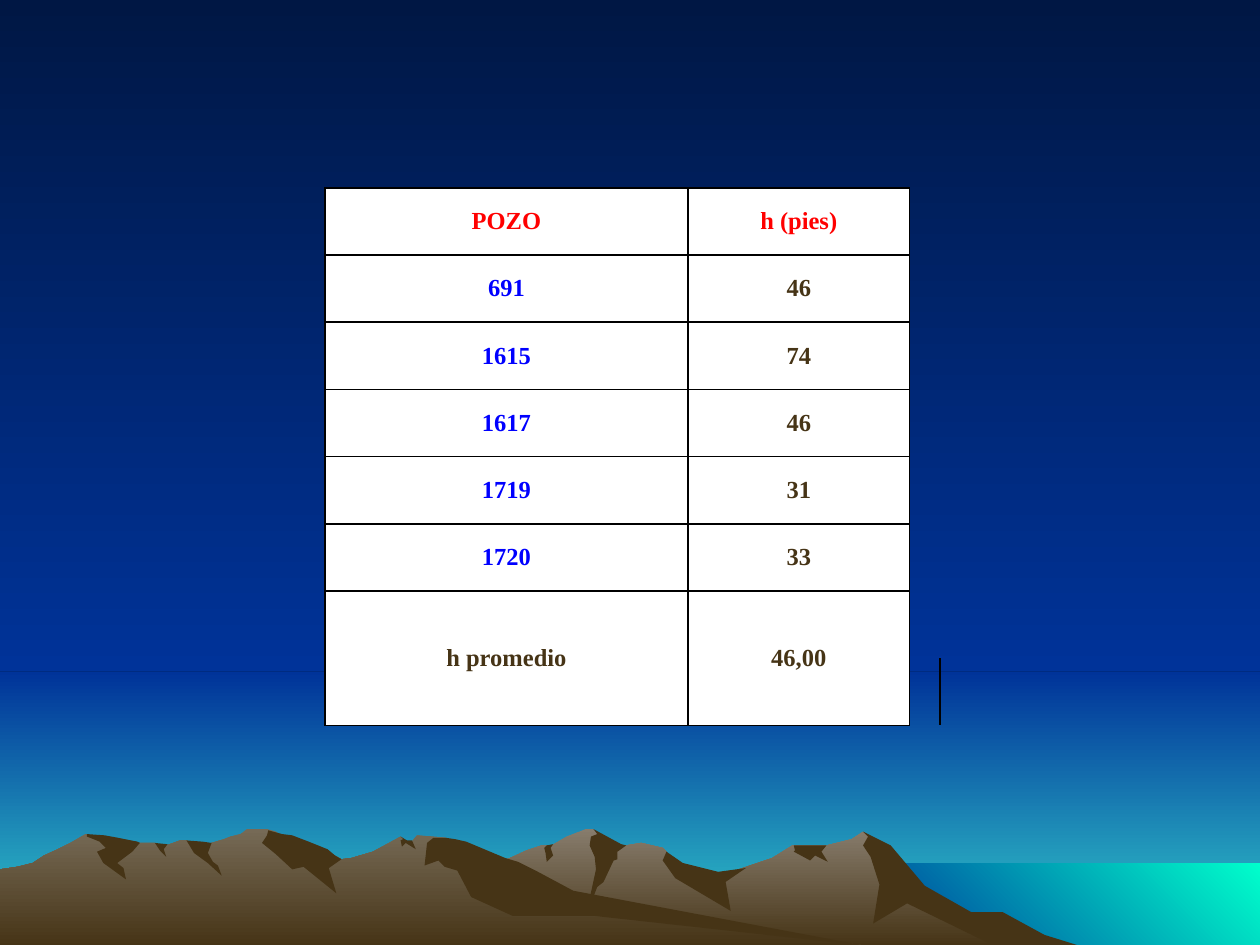
from lxml.etree import SubElement
from pptx import Presentation
from pptx.dml.color import RGBColor
from pptx.enum.shapes import MSO_SHAPE
from pptx.enum.text import MSO_ANCHOR, PP_ALIGN
from pptx.oxml.ns import qn
from pptx.util import Inches, Pt

NIGHT = RGBColor(0x00, 0x17, 0x44)
BLUE = RGBColor(0x00, 0x33, 0x99)
HORIZON = RGBColor(0x33, 0xCC, 0xCC)
SEA = RGBColor(0x00, 0xFF, 0xCC)
FAR_RIDGE = RGBColor(0x87, 0x7C, 0x6C)
NEAR_RIDGE = RGBColor(0x76, 0x6A, 0x56)
BROWN = RGBColor(0x46, 0x34, 0x16)
RED = RGBColor(0xFF, 0x00, 0x00)
WELL_BLUE = RGBColor(0x00, 0x00, 0xFF)
WHITE = RGBColor(0xFF, 0xFF, 0xFF)

DOWN, UP_RIGHT = 270, 45  # gradient directions, counter-clockwise degrees

# Mountain outlines, in inches on the slide
FAR_RANGE = [
    (8.02, 7.4), (7.78, 7.27), (7.64, 7.23), (7.23, 6.98), (7.02, 6.71), (6.85, 6.6),
    (6.76, 6.66), (6.56, 6.71), (6.29, 6.71), (6.13, 6.81), (5.66, 6.97), (5.36, 6.9),
    (5.29, 6.76), (5.26, 6.73), (5.09, 6.69), (4.97, 6.71), (4.86, 6.73), (4.74, 6.61),
    (4.71, 6.58), (4.65, 6.58), (4.5, 6.64), (4.38, 6.71), (4.3, 6.71), (4.18, 6.75),
    (4.05, 6.81), (3.94, 6.85), (3.55, 6.98), (3.27, 7.09), (2.77, 7.39), (2.58, 7.51),
    (8.21, 7.51)]
NEAR_RANGE = [
    (6.9, 7.51), (6.67, 7.48), (4.32, 7.12), (3.54, 6.65), (3.31, 6.63), (3.27, 6.68),
    (3.23, 6.68), (3.18, 6.64), (2.96, 6.76), (2.79, 6.81), (2.71, 6.82), (2.6, 6.76),
    (2.36, 6.81), (2.23, 6.63), (2.19, 6.6), (2.12, 6.58), (1.96, 6.58), (1.91, 6.62),
    (1.83, 6.64), (1.78, 6.66), (1.68, 6.69), (1.6, 6.71), (1.48, 6.67), (1.43, 6.67),
    (1.32, 6.71), (1.28, 6.71), (1.23, 6.69), (1.11, 6.69), (0.94, 6.71), (0.68, 6.62),
    (0.56, 6.69), (0.46, 6.74), (0.35, 6.79), (0.26, 6.85), (0.14, 6.88), (0, 6.9),
    (0, 7.51)]
FAR_SHADOWS = [
    [(7.96, 7.24), (7.71, 7.24), (7.34, 7.03), (7.07, 6.71), (6.85, 6.6), (6.89, 6.64),
     (6.85, 6.71), (6.91, 6.8), (6.98, 7.02), (6.93, 7.33), (7.2, 7.17), (7.92, 7.52),
     (8.58, 7.51), (8.29, 7.42)],
    [(4.71, 6.58), (4.74, 6.62), (4.69, 6.64), (4.68, 6.71), (4.72, 6.8), (4.73, 6.9),
     (4.65, 7.27), (4.74, 7.04), (4.79, 7), (4.87, 6.83), (4.9, 6.82), (4.9, 6.76),
     (4.97, 6.71), (4.93, 6.7)],
    [(5.29, 6.76), (5.26, 6.83), (5.36, 6.97), (5.8, 7.23), (5.76, 7), (5.92, 6.89),
     (5.7, 6.92), (5.42, 6.85)],
    [(6.5, 6.71), (6.3, 6.71), (6.31, 6.75), (6.3, 6.76), (6.43, 6.83), (6.47, 6.79),
     (6.57, 6.84), (6.52, 6.76), (6.56, 6.71)],
    [(4.33, 6.77), (4.32, 6.73), (4.34, 6.71), (4.39, 6.7), (4.37, 6.73), (4.39, 6.79),
     (4.34, 6.84)],
]
NEAR_SHADOWS = [
    [(2.12, 6.63), (2.08, 6.69), (2.19, 6.78), (2.32, 6.9), (2.41, 6.88), (2.67, 7.09),
     (2.61, 6.89), (2.71, 6.82), (2.66, 6.79), (2.6, 6.74), (2.45, 6.68), (2.32, 6.63),
     (2.24, 6.62), (2.13, 6.59)],
    [(3.7, 6.68), (3.61, 6.66), (3.54, 6.65), (3.44, 6.65), (3.39, 6.69), (3.37, 6.87),
     (3.48, 6.83), (3.53, 6.88), (3.63, 6.91), (3.74, 7.12), (4.07, 7.27), (4.72, 7.27),
     (6.9, 7.51), (6.83, 7.5), (4.55, 7.07), (4.27, 6.92), (4.11, 6.84), (4.01, 6.81)],
    [(3.18, 6.67), (3.2, 6.66), (3.18, 6.64), (3.23, 6.67), (3.27, 6.67), (3.3, 6.74),
     (3.22, 6.69), (3.19, 6.72)],
    [(1.48, 6.67), (1.61, 6.68), (1.68, 6.69), (1.65, 6.77), (1.69, 6.84), (1.73, 6.87),
     (1.76, 6.95), (1.65, 6.85), (1.54, 6.77)],
    [(1.33, 6.7), (1.3, 6.74), (1.32, 6.8), (1.27, 6.75), (1.23, 6.69)],
    [(1.09, 6.68), (1.11, 6.69), (1.05, 6.76), (0.93, 6.85), (0.98, 6.89), (1, 6.98),
     (0.82, 6.85), (0.77, 6.76), (0.84, 6.73), (0.79, 6.68), (0.69, 6.64), (0.69, 6.62),
     (0.83, 6.63), (0.94, 6.65)],
]

WELLS = [("POZO", "h (pies)"), ("691", "46"), ("1615", "74"), ("1617", "46"),
         ("1719", "31"), ("1720", "33"), ("h promedio", "46,00")]
COLUMN_WIDTHS = (2.88, 1.76, 0.23)
ROW_COUNT = len(WELLS) + 1  # the average spans two rows
TABLE_HEIGHT = 4.27


def paint(fill, colors, angle=DOWN):
    """Fill with one colour, or with a gradient between two."""
    if len(colors) == 1:
        fill.solid()
        fill.fore_color.rgb = colors[0]
        return
    fill.gradient()
    fill.gradient_angle = angle
    for stop, color in zip(fill.gradient_stops, colors):
        stop.color.rgb = color


def finish(shape, colors, angle=DOWN):
    paint(shape.fill, colors, angle)
    shape.line.fill.background()
    shape.shadow.inherit = False


def add_band(slide, left, top, width, height, colors, angle=DOWN):
    band = slide.shapes.add_shape(MSO_SHAPE.RECTANGLE, Inches(left), Inches(top),
                                  Inches(width), Inches(height))
    finish(band, colors, angle)


def add_outline(slide, points, *colors):
    start, *corners = [(Inches(x), Inches(y)) for x, y in points]
    builder = slide.shapes.build_freeform(*start)
    builder.add_line_segments(corners, close=True)
    finish(builder.convert_to_shape(), colors)


def set_borders(cell, black_sides):
    """Draw 1 pt black lines on the given sides (L, R, T, B), none elsewhere."""
    properties = cell._tc.get_or_add_tcPr()
    for index, side in enumerate("LRTB"):
        line = properties.makeelement(qn(f"a:ln{side}"), {"w": str(Pt(1))})
        properties.insert(index, line)
        if side in black_sides:
            color = SubElement(SubElement(line, qn("a:solidFill")), qn("a:srgbClr"))
            color.set("val", "000000")
        else:
            SubElement(line, qn("a:noFill"))


def write_cell(cell, text, color):
    cell.text = text
    cell.vertical_anchor = MSO_ANCHOR.MIDDLE
    entry = cell.text_frame.paragraphs[0]
    entry.alignment = PP_ALIGN.CENTER
    entry.font.name = "Times New Roman"
    entry.font.size = Pt(14)
    entry.font.bold = True
    entry.font.color.rgb = color


def add_well_table(slide):
    table = slide.shapes.add_table(
        ROW_COUNT, len(COLUMN_WIDTHS), Inches(2.58), Inches(1.49),
        Inches(sum(COLUMN_WIDTHS)), Inches(TABLE_HEIGHT)).table
    table.first_row = table.horz_banding = False
    for column, width in zip(table.columns, COLUMN_WIDTHS):
        column.width = Inches(width)
    for row in table.rows:
        row.height = Inches(TABLE_HEIGHT / ROW_COUNT)

    # White grid, with an open narrow column at its right
    last = ROW_COUNT - 1
    for row in range(ROW_COUNT):
        for column in (0, 1):
            paint(table.cell(row, column).fill, [WHITE])
            set_borders(table.cell(row, column), "LRTB")
        margin = table.cell(row, 2)
        margin.fill.background()
        set_borders(margin, "LR" if row == last else "L")

    for column in (0, 1):
        table.cell(last - 1, column).merge(table.cell(last, column))
    for row, (well, thickness) in enumerate(WELLS):
        header, average = row == 0, row == len(WELLS) - 1
        well_color = RED if header else BROWN if average else WELL_BLUE
        write_cell(table.cell(row, 0), well, well_color)
        write_cell(table.cell(row, 1), thickness, RED if header else BROWN)


def main():
    prs = Presentation()
    prs.slide_width, prs.slide_height = Inches(10), Inches(7.5)
    slide = prs.slides.add_slide(prs.slide_layouts[6])

    # Sky and sea
    paint(slide.background.fill, [NIGHT, BLUE])
    add_band(slide, 0, 5.33, 10, 2.17, [BLUE, HORIZON])
    add_band(slide, 0, 0, 10, 5.33, [NIGHT, BLUE])
    add_band(slide, 6.83, 6.85, 3.17, 0.67, [BLUE, SEA], UP_RIGHT)

    # Mountains, each range followed by its shadows
    for ridge, crest, shadows in ((FAR_RANGE, FAR_RIDGE, FAR_SHADOWS),
                                  (NEAR_RANGE, NEAR_RIDGE, NEAR_SHADOWS)):
        add_outline(slide, ridge, crest, BROWN)
        for shadow in shadows:
            add_outline(slide, shadow, BROWN)

    add_well_table(slide)
    prs.save("out.pptx")


if __name__ == "__main__":
    main()
